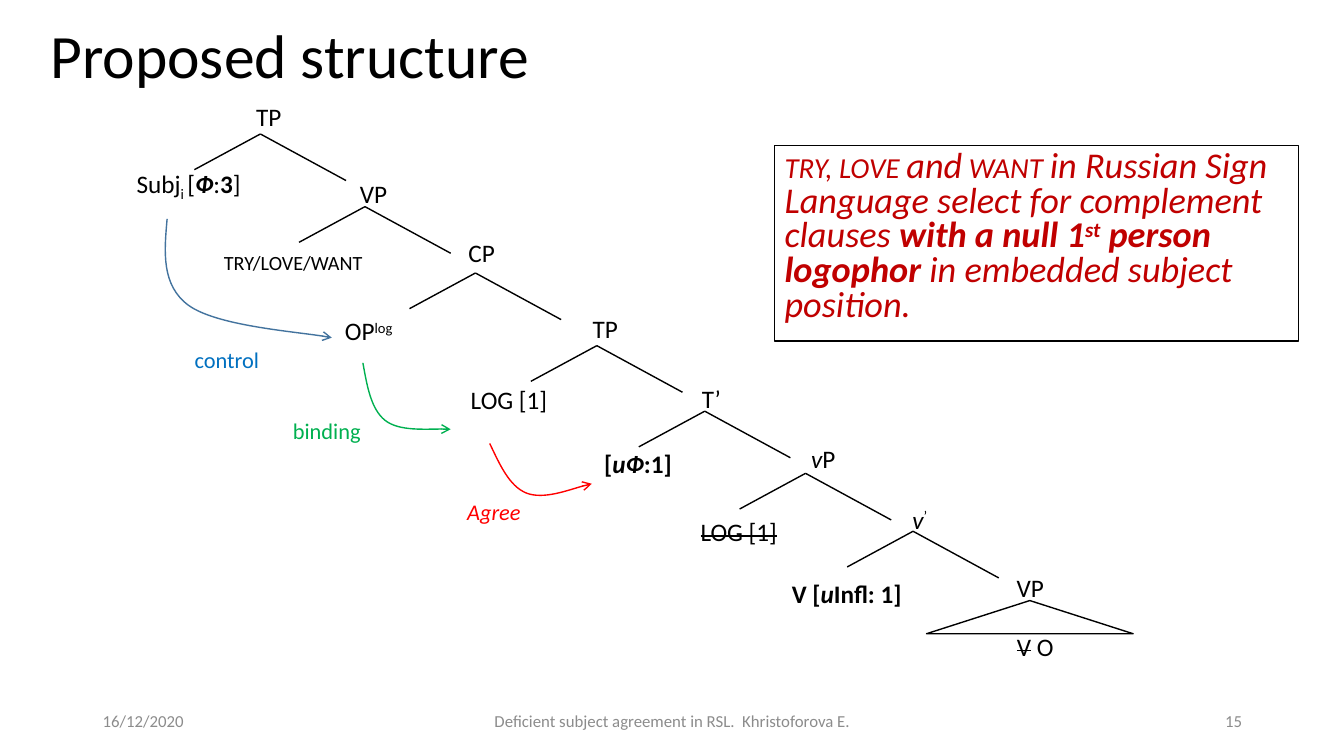
"""Build a slide with the syntactic tree proposed for null logophors in Russian Sign Language."""
from lxml import etree
from pptx import Presentation
from pptx.dml.color import RGBColor
from pptx.enum.shapes import MSO_CONNECTOR, MSO_SHAPE
from pptx.enum.text import MSO_ANCHOR, MSO_AUTO_SIZE, PP_ALIGN
from pptx.oxml.ns import qn
from pptx.util import Inches, Pt

STRAIGHT = MSO_CONNECTOR.STRAIGHT
TRIANGLE = MSO_SHAPE.ISOSCELES_TRIANGLE
TOP, MIDDLE = MSO_ANCHOR.TOP, MSO_ANCHOR.MIDDLE
LEFT, CENTER, RIGHT = PP_ALIGN.LEFT, PP_ALIGN.CENTER, PP_ALIGN.RIGHT
FIXED = MSO_AUTO_SIZE.NONE

COLORS = {
    "ink": "000000", "paper": "FFFFFF", "claim": "C00000", "footer": "8C8C8C",
    "control_arrow": "43739E", "control": "0070C0", "binding": "00B050", "agree": "FF0000",
}
COLUMNS, ROWS = 160, 90
LEFT_BRANCH, RIGHT_BRANCH = (-7.85, 4.25), (10.2, 5.55)
HEAD_HEIGHT, LEAF_HEIGHT, CAPTION_HEIGHT = 3.35, 4.8, 4.45

BOLD, ITALIC = {"bold": True}, {"italic": True}
BOLD_ITALIC = {**BOLD, **ITALIC}
STRIKE, SMALL_CAPS = {"strike": "sngStrike"}, {"cap": "small"}
RAISED, LOWERED = {"baseline": "30000"}, {"baseline": "-25000"}

PROJECTIONS = [
    ((31, 15.95), (32, 13.8), 12.85, [("TP", {})],
     (22.45, 22.1), 29.75, [("Subj", {}), ("i ", LOWERED), ("[", {}), ("Ф", BOLD_ITALIC),
                            (":", {}), ("3", BOLD), ("]", {})]),
    ((43.45, 24.6), (44.45, 23.05), 12.85, [("VP", {})],
     (34.9, 30.95), 30.25, [("try/love/want", SMALL_CAPS)]),
    ((56.6, 32.5), (57.35, 30.1), 8.65, [("CP", {})],
     (43.9, 39.35), 29.75, [("OP", {}), ("log", RAISED)]),
    ((71.05, 41.15), (72.05, 39.1), 12.85, [("TP", {})],
     (60.6, 47.5), 29.75, [("LOG [1]", {})]),
    ((83.9, 48.95), (84.7, 47.4), 8.65, [("T’", {})],
     (75.95, 55.2), 37.2, [("[", BOLD), ("uФ", BOLD_ITALIC), (":1]", BOLD)]),
    ((95.9, 56.35), (98, 54.6), 13.8, [("v", ITALIC), ("P", {})],
     (87.95, 63.25), 29.75, [("LOG [1]", STRIKE)]),
    ((108.7, 63.25), (109.5, 61.8), 13.8, [("v", ITALIC), ("’", RAISED)],
     (100.8, 70.7), 37.2, [("V [", BOLD), ("u", BOLD_ITALIC), ("Infl: 1]", BOLD)]),
]
DEPENDENCIES = [
    ("control", {}, "control", "control_arrow", (27, 42.8),
     [(19.9, 26.05), (19.55, 30), (19.2, 33.95), (22.45, 36.35),
      (25.8, 38.75), (36.6, 39.6), (39.5, 40.2)]),
    ("binding", {}, "binding", "binding", (38.9, 51.3),
     [(43.2, 43.2), (43.7, 45.95), (44.15, 48.7), (45.85, 50.05),
      (47.5, 51.35), (52.3, 51), (53.65, 51.1)]),
    ("Agree", ITALIC, "agree", "agree", (58.8, 60.9),
     [(58.3, 52.8), (59.5, 55.3), (60.6, 57.85), (62.65, 58.7),
      (64.7, 59.5), (69.1, 57.85), (70.45, 57.6)]),
]
CLAIM = [
    ("try, love ", SMALL_CAPS), ("and", {}), (" want ", SMALL_CAPS),
    ("in Russian Sign Language select for complement clauses ", {}),
    ("with a null 1", BOLD), ("st", {**BOLD, **RAISED}), (" person logophor ", BOLD),
    ("in embedded subject position.", {}),
]
FOOTER = [
    ("16/12/2020", 11.05, 36, LEFT),
    ("Deficient subject agreement in RSL.  Khristoforova E.", 53.05, 54, CENTER),
    ("15", 113.05, 36, RIGHT),
]


def write(frame, runs, size=18, color="ink", align=CENTER, anchor=MIDDLE,
          italic=False, spacing=None, before=None):
    """Fill a text frame with one paragraph of formatted runs."""
    frame.word_wrap = True
    frame.auto_size = FIXED
    frame.vertical_anchor = anchor
    paragraph = frame.paragraphs[0]
    paragraph.alignment = align
    if spacing:
        paragraph.line_spacing = spacing
    if before is not None:
        paragraph.space_before = Pt(before)
    for text, style in runs:
        run = paragraph.add_run()
        run.text = text
        run.font.name = "Calibri"
        run.font.size = Pt(size)
        run.font.color.rgb = RGBColor.from_string(COLORS[color])
        run.font.bold = style.get("bold", False)
        run.font.italic = style.get("italic", italic)
        for key in ("strike", "cap", "baseline"):
            if key in style:
                run.font._element.set(key, style[key])
    return paragraph


class TreeSlide:
    """Hold the grid, the line style and the current slide."""

    def __init__(self, deck):
        self.slide = deck.slides.add_slide(deck.slide_layouts[1])
        self.shapes = self.slide.shapes
        self.column = deck.slide_width / COLUMNS
        self.row = deck.slide_height / ROWS

    def at(self, x, y):
        return round(x * self.column), round(y * self.row)

    def outline(self, item, color="ink"):
        item.line.color.rgb = RGBColor.from_string(COLORS[color])
        item.line.width = Pt(1)

    def paper(self, item):
        item.fill.solid()
        item.fill.fore_color.rgb = RGBColor.from_string(COLORS["paper"])
        self.outline(item)

    def placeholder(self, index, x, y, width, height, runs, **style):
        holder = self.slide.placeholders[index]
        holder.left, holder.top = self.at(x, y)
        holder.width, holder.height = self.at(width, height)
        return holder, write(holder.text_frame, runs, align=LEFT, anchor=TOP, **style)

    def text(self, x, y, width, height, runs, **style):
        box = self.shapes.add_textbox(*self.at(x, y), *self.at(width, height))
        write(box.text_frame, runs, **style)

    def label(self, center, width, height, runs, **style):
        self.text(center[0] - width / 2, center[1] - height / 2, width, height, runs, **style)

    def branches(self, apex):
        for across, down in (LEFT_BRANCH, RIGHT_BRANCH):
            branch = self.shapes.add_connector(
                STRAIGHT, *self.at(*apex), *self.at(apex[0] + across, apex[1] + down))
            self.outline(branch)
            etree.SubElement(branch._element.spPr, qn("a:effectLst"))

    def triangle(self, x, y, width, height):
        triangle = self.shapes.add_shape(TRIANGLE, *self.at(x, y), *self.at(width, height))
        triangle.shadow.inherit = False
        self.paper(triangle)

    def curved_arrow(self, points, color):
        start, *rest = [self.at(*point) for point in points]
        builder = self.shapes.build_freeform(*start)
        builder.add_line_segments(rest, close=False)
        arrow = builder.convert_to_shape()
        arrow.shadow.inherit = False
        arrow.fill.background()
        self.outline(arrow, color)
        outline = next(arrow._element.iter(qn("a:path")))
        segments = outline.findall(qn("a:lnTo"))
        for first in range(0, len(segments), 3):
            curve = etree.SubElement(outline, qn("a:cubicBezTo"))
            for segment in segments[first:first + 3]:
                curve.append(segment[0])
                outline.remove(segment)
        etree.SubElement(arrow.line._get_or_add_ln(), qn("a:tailEnd"), type="arrow")


def main():
    deck = Presentation()
    deck.slide_width, deck.slide_height = Inches(13.33), Inches(7.5)
    tree = TreeSlide(deck)
    tree.placeholder(0, 4.8, 2.4, 138, 17.4, [("Proposed structure", {})], size=44, spacing=0.9)
    claim, statement = tree.placeholder(1, 92.2, 17.3, 62.4, 23.3, CLAIM, size=25.9,
                                        color="claim", italic=True, spacing=0.8, before=10)
    tree.paper(claim)
    bullet = statement._p.get_or_add_pPr()
    bullet.set("marL", "0")
    bullet.set("indent", "0")
    etree.SubElement(bullet, qn("a:buNone"))

    for apex, head_center, head_width, head, leaf_center, leaf_width, leaf in PROJECTIONS:
        tree.branches(apex)
        tree.label(head_center, head_width, HEAD_HEIGHT, head)
        tree.label(leaf_center, leaf_width, LEAF_HEIGHT, leaf)

    tree.triangle(110.3, 71.5, 24.6, 3.95)
    tree.label((122.65, 69.95), 8.65, HEAD_HEIGHT, [("VP", {})])
    tree.label((123.25, 76.9), 8.65, HEAD_HEIGHT, [("V", STRIKE), (" O", {})])

    for relation, style, color, arrow_color, center, points in DEPENDENCIES:
        tree.curved_arrow(points, arrow_color)
        tree.label(center, 29.75, CAPTION_HEIGHT, [(relation, style)], size=16, color=color)

    for note, x, width, align in FOOTER:
        tree.text(x, 83.4, width, 4.8, [(note, {})], size=12, color="footer", align=align)
    deck.save("out.pptx")


if __name__ == "__main__":
    main()
